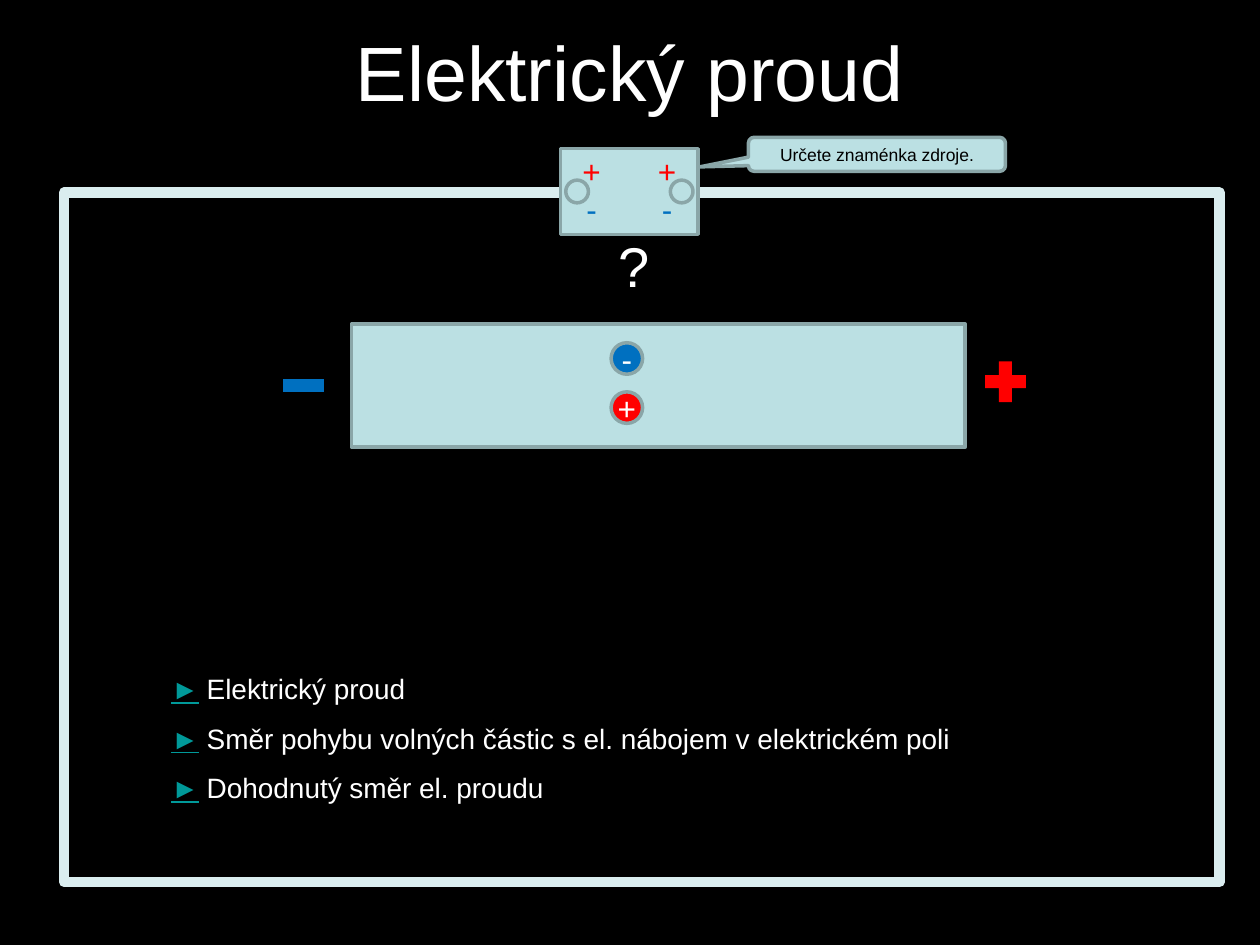
from pptx import Presentation
from pptx.dml.color import RGBColor
from pptx.enum.shapes import MSO_SHAPE
from pptx.enum.text import MSO_ANCHOR, MSO_AUTO_SIZE, PP_ALIGN
from pptx.util import Inches, Pt

BLACK = RGBColor(0x00, 0x00, 0x00)
WHITE = RGBColor(0xFF, 0xFF, 0xFF)
RED = RGBColor(0xFF, 0x00, 0x00)
BLUE = RGBColor(0x00, 0x70, 0xC0)
TEAL = RGBColor(0x00, 0x99, 0x99)
PALE = RGBColor(0xBB, 0xE0, 0xE3)
EDGE = RGBColor(0x8A, 0xA6, 0xA8)
WIRE = RGBColor(0xDA, 0xED, 0xEF)

COLUMNS, ROWS = 100, 75
CELL = Inches(0.1)
TOPICS = [
    "Elektrický proud",
    "Směr pohybu volných částic s el. nábojem v elektrickém poli",
    "Dohodnutý směr el. proudu",
]


def grid(*cells):
    return [round(n * CELL) for n in cells]


def style(p, size, color, align=PP_ALIGN.CENTER):
    p.alignment = align
    p.font.name = "Arial"
    p.font.size = Pt(size)
    p.font.color.rgb = color


def add_shape(s, kind, box, fill=PALE, line=EDGE, width=2):
    sp = s.shapes.add_shape(kind, *grid(*box))
    sp.shadow.inherit = False
    if fill is None:
        sp.fill.background()
    else:
        sp.fill.solid()
        sp.fill.fore_color.rgb = fill
    if line is None:
        sp.line.fill.background()
    else:
        sp.line.color.rgb = line
        sp.line.width = Pt(width)
    return sp


def set_label(sp, text, size, color):
    tf = sp.text_frame
    tf.vertical_anchor = MSO_ANCHOR.MIDDLE
    tf.text = text
    style(tf.paragraphs[0], size, color)


def add_text(s, box, lines, size, align):
    tf = s.shapes.add_textbox(*grid(*box)).text_frame
    tf.word_wrap = True
    tf.auto_size = MSO_AUTO_SIZE.SHAPE_TO_FIT_TEXT
    tf.text = "\n".join(text for text, _ in lines)
    for p, (_, color) in zip(tf.paragraphs, lines):
        style(p, size, color, align)


def add_particle(s, row, sign, color):
    sp = add_shape(s, MSO_SHAPE.OVAL, (48.5, row, 2.5, 2.5), color)
    tf = sp.text_frame
    tf.margin_left = tf.margin_right = tf.margin_top = tf.margin_bottom = 0
    set_label(sp, sign, 18, WHITE)


def fill_title(title):
    title.left, title.top, title.width, title.height = grid(0, 0, COLUMNS, 11.3)
    set_label(title, "Elektrický proud", 44, WHITE)


def fill_topics(body):
    body.left, body.top, body.width, body.height = grid(12.6, 52.8, 77.8, 13.5)
    tf = body.text_frame
    tf.auto_size = MSO_AUTO_SIZE.NONE
    tf.vertical_anchor = MSO_ANCHOR.TOP
    for i, topic in enumerate(TOPICS):
        p = tf.add_paragraph() if i else tf.paragraphs[0]
        style(p, 16, WHITE, PP_ALIGN.LEFT)
        p.space_before = Pt(3.2 if i else 0)
        p.space_after = Pt(6)
        marker = p.add_run()
        marker.text = "►"
        marker.font.underline = True
        marker.font.color.rgb = TEAL
        r = p.add_run()
        r.text = " " + topic
        r.font.color.rgb = WHITE


def add_source(s):
    add_shape(s, MSO_SHAPE.RECTANGLE, (44.5, 11.8, 10.9, 6.8))
    for column in (44.5, 50.5):
        add_text(s, (column, 11.6, 4.9, 7.1), [("+", RED), ("-", BLUE)], 18, PP_ALIGN.CENTER)
    for column in (44.9, 53.2):
        add_shape(s, MSO_SHAPE.OVAL, (column, 14.3, 1.8, 1.8))
    add_text(s, (48.1, 17.9, 3.9, 5.8), [("?", WHITE)], 32, PP_ALIGN.LEFT)
    callout = add_shape(s, MSO_SHAPE.ROUNDED_RECTANGULAR_CALLOUT, (59.4, 10.9, 20.4, 2.7))
    for i, value in enumerate((-0.69, 0.37, 0.17)):
        callout.adjustments[i] = value
    set_label(callout, "Určete znaménka zdroje.", 10, BLACK)


def add_conductor(s):
    add_shape(s, MSO_SHAPE.RECTANGLE, (27.9, 25.7, 48.7, 9.8))
    add_particle(s, 27.2, "-", BLUE)
    add_particle(s, 31.1, "+", RED)
    add_shape(s, MSO_SHAPE.MATH_MINUS, (21.9, 28.4, 4.4, 4.4), BLUE, None)
    add_shape(s, MSO_SHAPE.MATH_PLUS, (77.6, 28.1, 4.4, 4.4), RED, None)


def main():
    prs = Presentation()
    prs.slide_width, prs.slide_height = grid(COLUMNS, ROWS)
    s = prs.slides.add_slide(prs.slide_layouts[0])
    s.background.fill.solid()
    s.background.fill.fore_color.rgb = BLACK
    fill_title(s.shapes.title)
    fill_topics(s.placeholders[1])
    add_shape(s, MSO_SHAPE.RECTANGLE, (5.1, 15.3, 91.7, 54.7), None, WIRE, 6)
    add_source(s)
    add_conductor(s)
    prs.save("out.pptx")


if __name__ == "__main__":
    main()
